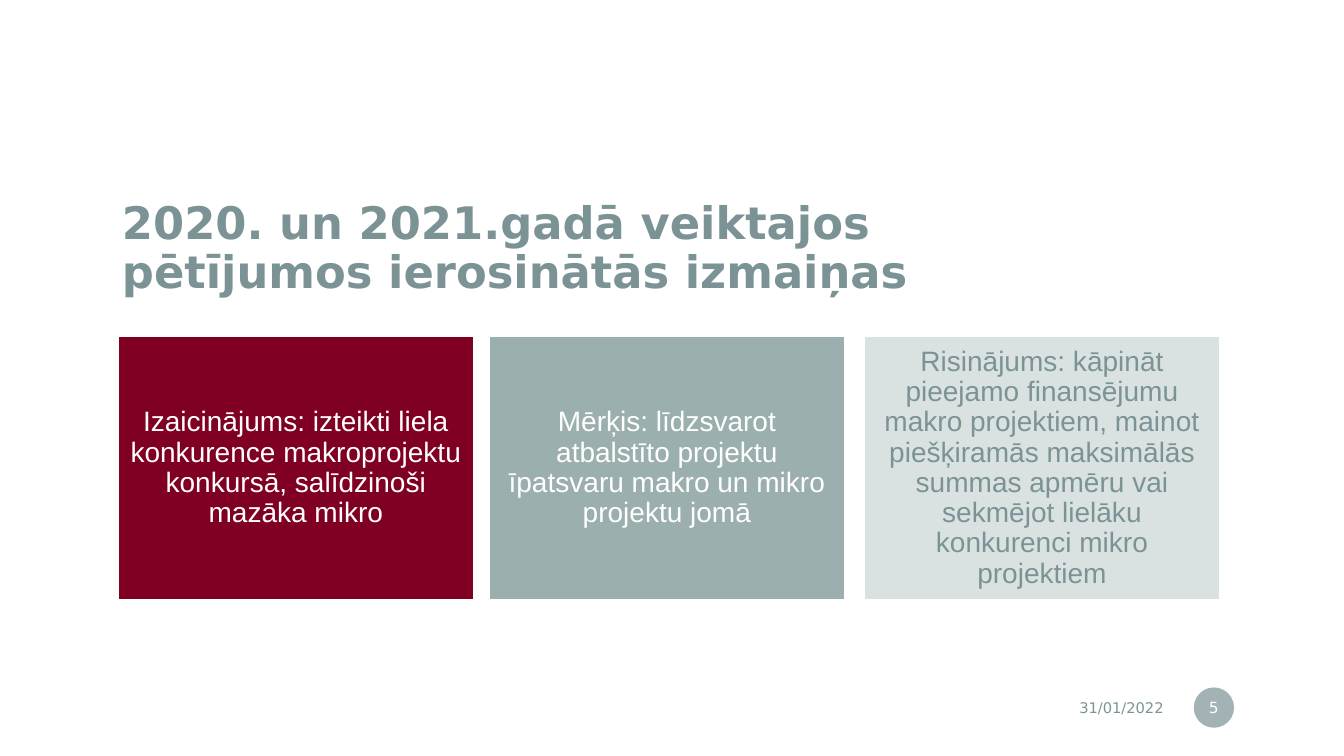
import pptx
import pptx.util
import pptx.dml.color
import pptx.enum.shapes
import pptx.enum.text
import pptx.oxml
import pptx.oxml.ns

Inches = pptx.util.Inches
Pt = pptx.util.Pt
SHAPE = pptx.enum.shapes.MSO_SHAPE
ALIGN = pptx.enum.text.PP_ALIGN

SLATE = "7C9396"
WHITE = "FFFFFF"
CARDS = [
    (1.17, "800024", WHITE,
     "Izaicinājums: izteikti liela konkurence makroprojektu konkursā, salīdzinoši mazāka mikro"),
    (4.85, "9CAFAF", WHITE,
     "Mērķis: līdzsvarot atbalstīto projektu īpatsvaru makro un mikro projektu jomā"),
    (8.57, "DAE1E1", SLATE,
     "Risinājums: kāpināt pieejamo finansējumu makro projektiem, mainot piešķiramās "
     "maksimālās summas apmēru vai sekmējot lielāku konkurenci mikro projektiem"),
]


def rgb(color):
    return pptx.dml.color.RGBColor.from_string(color)


def set_text(sp, text, size, font, color, align, margins=(0.1, 0.05), bold=False, spacing=1.0):
    tf = sp.text_frame
    tf.text = text
    tf.word_wrap = True
    tf.auto_size = pptx.enum.text.MSO_AUTO_SIZE.NONE
    tf.vertical_anchor = pptx.enum.text.MSO_ANCHOR.MIDDLE
    tf.margin_left = tf.margin_right = Inches(margins[0])
    tf.margin_top = tf.margin_bottom = Inches(margins[1])
    p = tf.paragraphs[0]
    p.alignment = align
    p.line_spacing = spacing
    r = p.runs[0]
    r.font.size = Pt(size)
    r.font.name = font
    r.font.bold = bold
    r.font.color.rgb = rgb(color)


def add_title(s, text):
    sp = s.shapes.title
    sp.left, sp.top, sp.width, sp.height = [Inches(v) for v in (1.01, 1.86, 8.73, 1.23)]
    set_text(sp, text, 32, "DejaVu Sans", SLATE, ALIGN.LEFT, (0.2, 0.2), True, 0.9)


def add_filled(s, kind, left, top, width, height, fill):
    sp = s.shapes.add_shape(kind, Inches(left), Inches(top), Inches(width), Inches(height))
    sp.shadow.inherit = False
    sp.fill.solid()
    sp.fill.fore_color.rgb = rgb(fill)
    return sp


def add_card(s, left, fill, color, text):
    sp = add_filled(s, SHAPE.RECTANGLE, left, 3.34, 3.53, 2.61, fill)
    sp.line.color.rgb = rgb(WHITE)
    sp.line.width = Pt(1)
    set_text(sp, text, 20, "Arial", color, ALIGN.CENTER, (0.08, 0.08), spacing=0.9)


def add_date(s, text):
    sp = s.shapes.add_textbox(Inches(8.63), Inches(6.84), Inches(3.01), Inches(0.35))
    set_text(sp, text, 10.5, "DejaVu Sans", SLATE, ALIGN.RIGHT)


def add_page_badge(s, text):
    sp = add_filled(s, SHAPE.OVAL, 11.84, 6.82, 0.4, 0.4, SLATE)
    sp.line.fill.background()
    clr = sp.fill._xPr.find(".//" + pptx.oxml.ns.qn("a:srgbClr"))
    clr.append(pptx.oxml.parse_xml(
        f'<a:alpha {pptx.oxml.ns.nsdecls("a")} val="70000"/>'))
    set_text(sp, text, 11, "DejaVu Sans", WHITE, ALIGN.CENTER, (0.02, 0.05))


def main():
    prs = pptx.Presentation()
    prs.slide_width = Inches(13.33)
    prs.slide_height = Inches(7.5)
    s = prs.slides.add_slide(prs.slide_layouts[5])
    add_title(s, "2020. un 2021.gadā veiktajos pētījumos ierosinātās izmaiņas")
    add_date(s, "31/01/2022")
    add_page_badge(s, "5")
    for card in CARDS:
        add_card(s, *card)
    prs.save("out.pptx")


if __name__ == "__main__":
    main()
